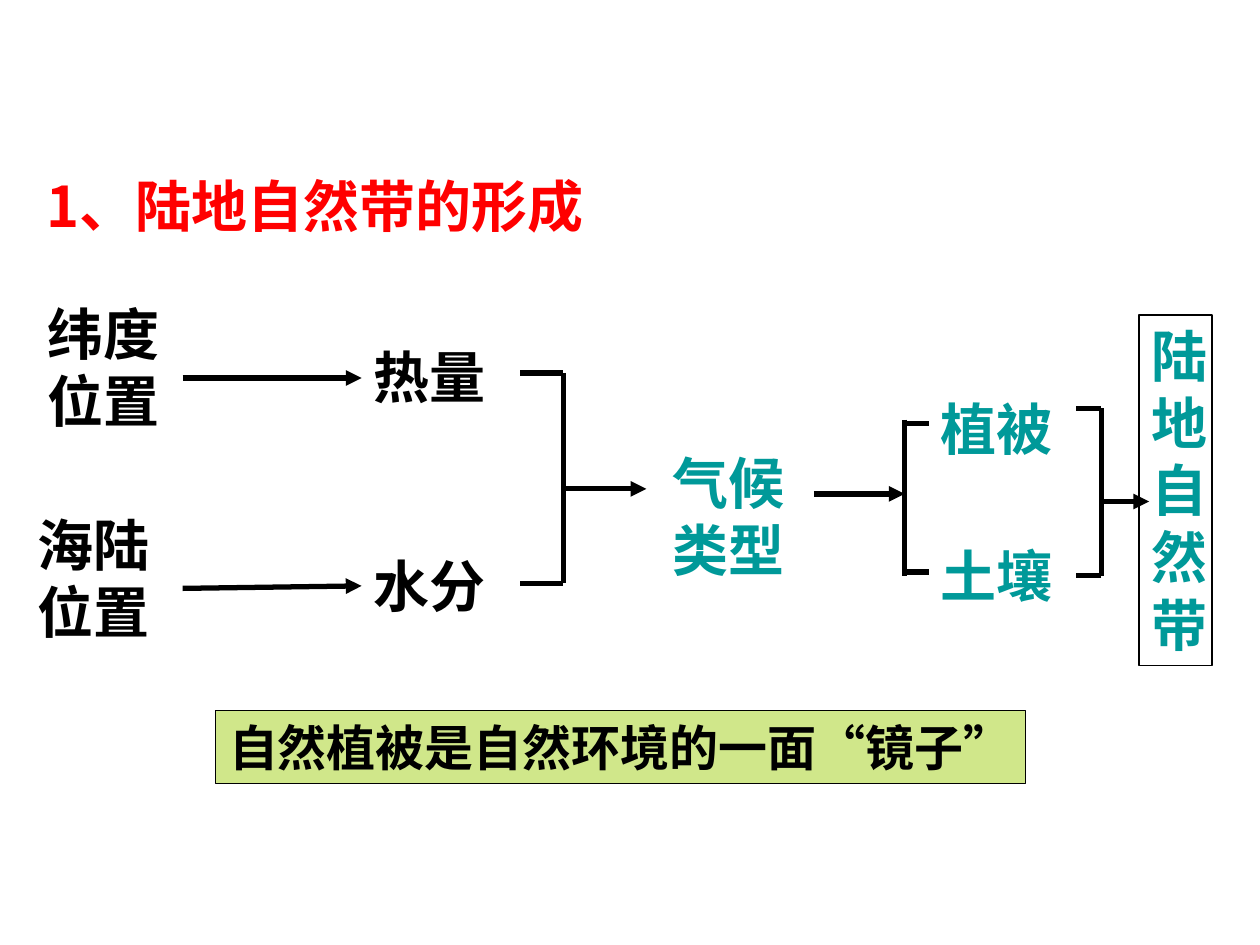
from dataclasses import dataclass

from lxml import etree
from pptx import Presentation
from pptx.dml.color import RGBColor
from pptx.enum.shapes import MSO_CONNECTOR, MSO_SHAPE
from pptx.enum.text import MSO_ANCHOR, MSO_AUTO_SIZE, PP_ALIGN
from pptx.oxml.ns import qn
from pptx.util import Inches, Pt

STRAIGHT = MSO_CONNECTOR.STRAIGHT
RECT = MSO_SHAPE.RECTANGLE
TOP, MIDDLE = MSO_ANCHOR.TOP, MSO_ANCHOR.MIDDLE
LEFT, CENTER = PP_ALIGN.LEFT, PP_ALIGN.CENTER
NO_FIT = MSO_AUTO_SIZE.NONE
TITLE_ONLY = 5
COLS, ROWS = 100, 75


@dataclass(frozen=True)
class Theme:
    font: str = "Noto Sans CJK SC"
    latin: str = "Arial"
    ink: str = "000000"
    title: str = "FF0000"
    teal: str = "009999"
    lime: str = "99CC00"
    lime_alpha: int = 46
    size: int = 32
    note_size: int = 28
    line: float = 3
    border: float = 0.75


class Deck:
    def __init__(self, theme):
        self.t = theme
        self.prs = Presentation()
        self.prs.slide_width, self.prs.slide_height = Inches(10), Inches(7.5)
        self.s = self.prs.slides.add_slide(self.prs.slide_layouts[TITLE_ONLY])

    def x(self, col):
        return round(self.prs.slide_width * col / COLS)

    def y(self, row):
        return round(self.prs.slide_height * row / ROWS)

    def place(self, sp, col, row, cols, rows):
        sp.left, sp.top = self.x(col), self.y(row)
        sp.width, sp.height = self.x(cols), self.y(rows)

    def add_text(self, sp, runs, color, size, align=LEFT, anchor=TOP, wrap=True):
        tf = sp.text_frame
        tf.auto_size, tf.word_wrap, tf.vertical_anchor = NO_FIT, wrap, anchor
        p = tf.paragraphs[0]
        p.alignment = align
        for text, font in runs:
            r = p.add_run()
            r.text = text
            r.font.name, r.font.size, r.font.bold = font, Pt(size), True
            r.font.color.rgb = RGBColor.from_string(color)
            ea = etree.SubElement(r._r.get_or_add_rPr(), qn("a:ea"))
            ea.set("typeface", font)

    def title(self, text, *box):
        sp = self.s.shapes.title
        self.place(sp, *box)
        self.add_text(sp, [(text, self.t.font)], self.t.title, self.t.size)

    def label(self, text, color, *box, align=LEFT):
        sp = self.s.shapes.add_textbox(0, 0, 0, 0)
        self.place(sp, *box)
        self.add_text(sp, [(text, self.t.font)], color, self.t.size, align)

    def frame(self, runs, color, size, *box, fill=None, alpha=100, **style):
        sp = self.s.shapes.add_shape(RECT, 0, 0, 0, 0)
        self.place(sp, *box)
        sp.shadow.inherit = False
        sp.line.color.rgb = RGBColor.from_string(self.t.ink)
        sp.line.width = Pt(self.t.border)
        if fill:
            sp.fill.solid()
            sp.fill.fore_color.rgb = RGBColor.from_string(fill)
            clr = sp._element.spPr.find(qn("a:solidFill"))[0]
            etree.SubElement(clr, qn("a:alpha")).set("val", str(alpha * 1000))
        else:
            sp.fill.background()
        self.add_text(sp, runs, color, size, **style)

    def line(self, x1, y1, x2, y2, arrow=False):
        c = self.s.shapes.add_connector(
            STRAIGHT, self.x(x1), self.y(y1), self.x(x2), self.y(y2))
        c.line.color.rgb = RGBColor.from_string(self.t.ink)
        c.line.width = Pt(self.t.line)
        if arrow:
            ln = c._element.spPr.find(qn("a:ln"))
            etree.SubElement(ln, qn("a:tailEnd")).set("type", "triangle")
        etree.SubElement(c._element.spPr, qn("a:effectLst"))

    def bracket(self, spine, tip, top, bottom, overhang=0):
        self.line(spine, top - overhang, spine, bottom + overhang)
        for row in (top, bottom):
            self.line(spine, row, tip, row)


def main():
    t = Theme()
    d = Deck(t)

    d.title("1、陆地自然带的形成", 2.7, 13.1, 51.2, 6.3)

    # Causes and the conditions they set
    d.label("纬度位置", t.ink, 2, 23.3, 12.5, 11.8, align=CENTER)
    d.label("海陆位置", t.ink, 2, 40, 12.5, 11.8)
    for text, row in (("热量", 26.7), ("水分", 43.3)):
        d.label(text, t.ink, 28.7, row, 13.3, 6.4)
    d.line(14.5, 30, 28.7, 30, arrow=True)
    d.line(14.5, 46.7, 28.7, 46.5, arrow=True)

    # Conditions join into the climate type
    d.bracket(44.7, 41.3, 29.6, 46.3)
    d.line(44.7, 38.8, 51.3, 38.8, arrow=True)
    d.label("气候类型", t.teal, 52.4, 35.1, 12.5, 11.8)

    # Climate branches into vegetation and soil
    d.line(64.6, 39.2, 71.8, 39.2, arrow=True)
    d.bracket(71.8, 73.7, 33.6, 45.4, overhang=0.3)
    for text, row in (("植被", 30.8), ("土壤", 42.5)):
        d.label(text, t.teal, 73.7, row, 11.7, 6.4)

    # Result: the natural zone
    d.frame([("陆地自然带", t.font)], t.teal, t.size, 90.4, 25, 5.8, 27.8)
    d.bracket(87.4, 85.4, 32.4, 45.7)
    d.line(87.4, 39.8, 91.2, 39.8, arrow=True)

    # Closing remark
    remark = [("自然植被是自然环境的一面", t.latin), ("“", t.font),
              ("镜子", t.latin), ("”", t.font)]
    d.frame(remark, t.ink, t.note_size, 17.1, 56.4, 64.3, 5.8,
            fill=t.lime, alpha=t.lime_alpha,
            align=CENTER, anchor=MIDDLE, wrap=False)

    d.prs.save("out.pptx")


if __name__ == "__main__":
    main()
